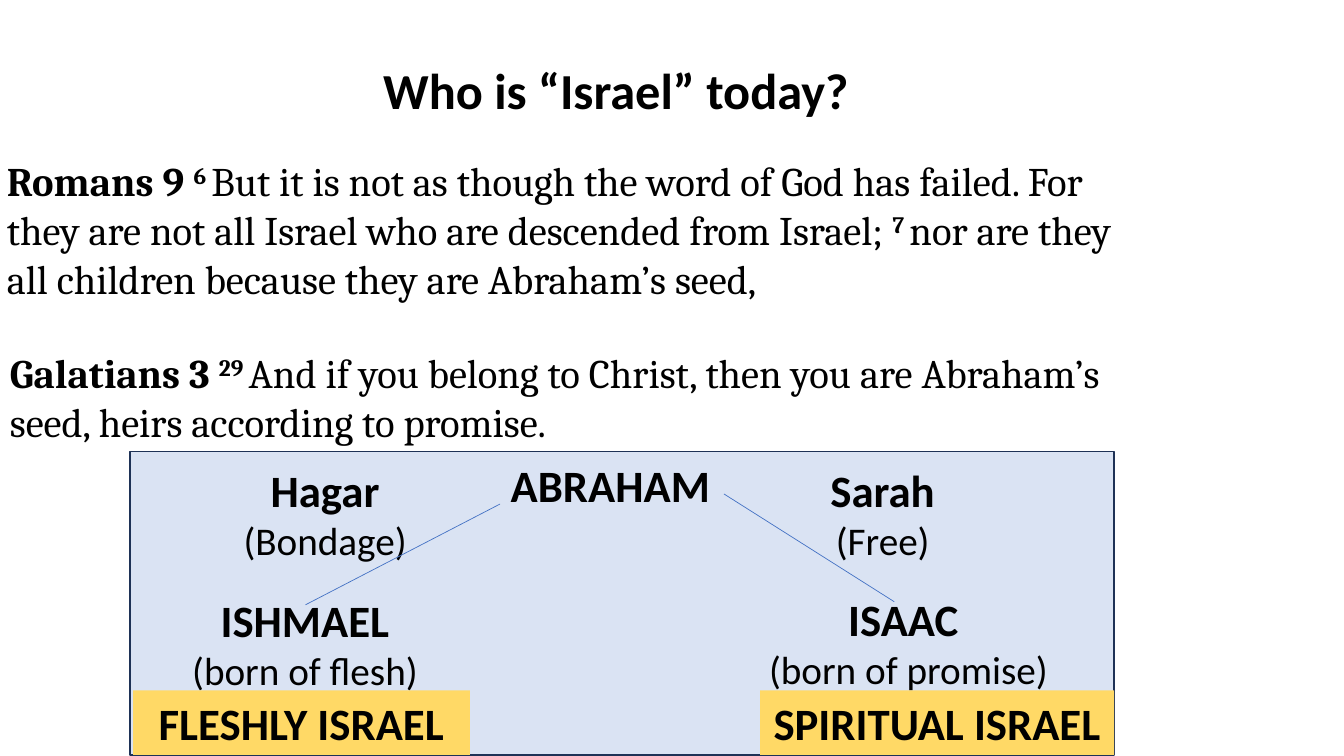
"""Build a slide on who counts as Israel, with Abraham's two lines of descent."""
import pptx
import pptx.dml.color
import pptx.enum.shapes
import pptx.enum.text
import pptx.oxml
import pptx.util

EMU_PER_PX = 9144
BLACK = pptx.dml.color.RGBColor(0x00, 0x00, 0x00)
PALE_BLUE = pptx.dml.color.RGBColor(0xDA, 0xE3, 0xF3)
NAVY = pptx.dml.color.RGBColor(0x1E, 0x32, 0x56)
BLUE = pptx.dml.color.RGBColor(0x44, 0x72, 0xC4)
GOLD = pptx.dml.color.RGBColor(0xFF, 0xD9, 0x66)
CENTER = pptx.enum.text.PP_ALIGN.CENTER
LEFT = pptx.enum.text.PP_ALIGN.LEFT


def px(*lengths):
    return [pptx.util.Emu(length * EMU_PER_PX) for length in lengths]


def add_span(para, text, font="Calibri", size=32, bold=True, raised=False):
    span = para.add_run()
    span.text = text
    span.font.name = font
    span.font.size = pptx.util.Pt(size)
    span.font.bold = bold
    span.font.color.rgb = BLACK
    if raised:
        span.font._element.set("baseline", "30000")


def set_frame(box, align=CENTER):
    frame = box.text_frame
    frame.word_wrap = True
    frame.auto_size = pptx.enum.text.MSO_AUTO_SIZE.NONE
    frame.vertical_anchor = pptx.enum.text.MSO_ANCHOR.TOP
    para = frame.paragraphs[0]
    para.alignment = align
    para.line_spacing = 1.0
    return para


def add_title(page, text, place):
    title = page.shapes.title
    title.left, title.top, title.width, title.height = px(*place)
    add_span(set_frame(title), text, size=36)


def add_verse(page, place, reference, passages):
    para = set_frame(page.shapes.add_textbox(*px(*place)), LEFT)
    add_span(para, reference, font="Cambria", size=29)
    for number, words in passages:
        add_span(para, number, font="Cambria", size=29, raised=True)
        add_span(para, words, font="Cambria", size=29, bold=False)


def add_person(page, place, name, note=None):
    box = page.shapes.add_textbox(*px(*place))
    add_span(set_frame(box), name)
    if note:
        para = box.text_frame.add_paragraph()
        para.alignment = CENTER
        add_span(para, note, size=28, bold=False)


def add_panel(page, place, fill, line=None):
    panel = page.shapes.add_shape(pptx.enum.shapes.MSO_SHAPE.RECTANGLE, *px(*place))
    panel.shadow.inherit = False
    panel.fill.solid()
    panel.fill.fore_color.rgb = fill
    if line is None:
        panel.line.fill.background()
    else:
        panel.line.color.rgb = line
        panel.line.width = pptx.util.Pt(1)
    return panel


def add_descent(page, ends):
    line = page.shapes.add_connector(pptx.enum.shapes.MSO_CONNECTOR.STRAIGHT, *px(*ends))
    line.line.color.rgb = BLUE
    line.line.width = pptx.util.Pt(0.5)
    line._element.spPr.append(pptx.oxml.parse_xml(
        '<a:effectLst xmlns:a="http://schemas.openxmlformats.org/drawingml/2006/main"/>'))


def main():
    deck = pptx.Presentation()
    deck.slide_width, deck.slide_height = px(1333, 750)
    page = deck.slides.add_slide(deck.slide_layouts.get_by_name("Title Only"))
    add_panel(page, (129, 448, 976, 301), PALE_BLUE, NAVY)
    add_title(page, "Who is “Israel” today?", (367, 54, 488, 71))
    add_verse(page, (-3, 150, 1123, 157), "Romans 9 ", [
        ("6 ", "But it is not as though the word of God has failed. "
               "For they are not all Israel who are descended from Israel; "),
        ("7 ", "nor are they all children because they are Abraham’s seed,"),
    ])
    add_verse(page, (0, 340, 1137, 108), "Galatians 3 ", [
        ("29 ", "And if you belong to Christ, then you are "
                "Abraham’s seed, heirs according to promise."),
    ])
    for place, name, note in [
        ((459, 449, 293, 64), "ABRAHAM", None),
        ((176, 454, 293, 111), "Hagar", "(Bondage)"),
        ((729, 454, 293, 111), "Sarah", "(Free)"),
        ((156, 583, 293, 111), "ISHMAEL", "(born of flesh)"),
        ((706, 582, 390, 111), "ISAAC ", "(born of promise)"),
    ]:
        add_person(page, place, name, note)
    for ends in [(496, 500, 303, 600), (887, 597, 718, 490)]:
        add_descent(page, ends)
    for left, width, people in [(132, 334, "FLESHLY ISRAEL"), (754, 351, "SPIRITUAL ISRAEL")]:
        add_span(set_frame(add_panel(page, (left, 685, width, 64), GOLD)), people)
    deck.save("out.pptx")


if __name__ == "__main__":
    main()
